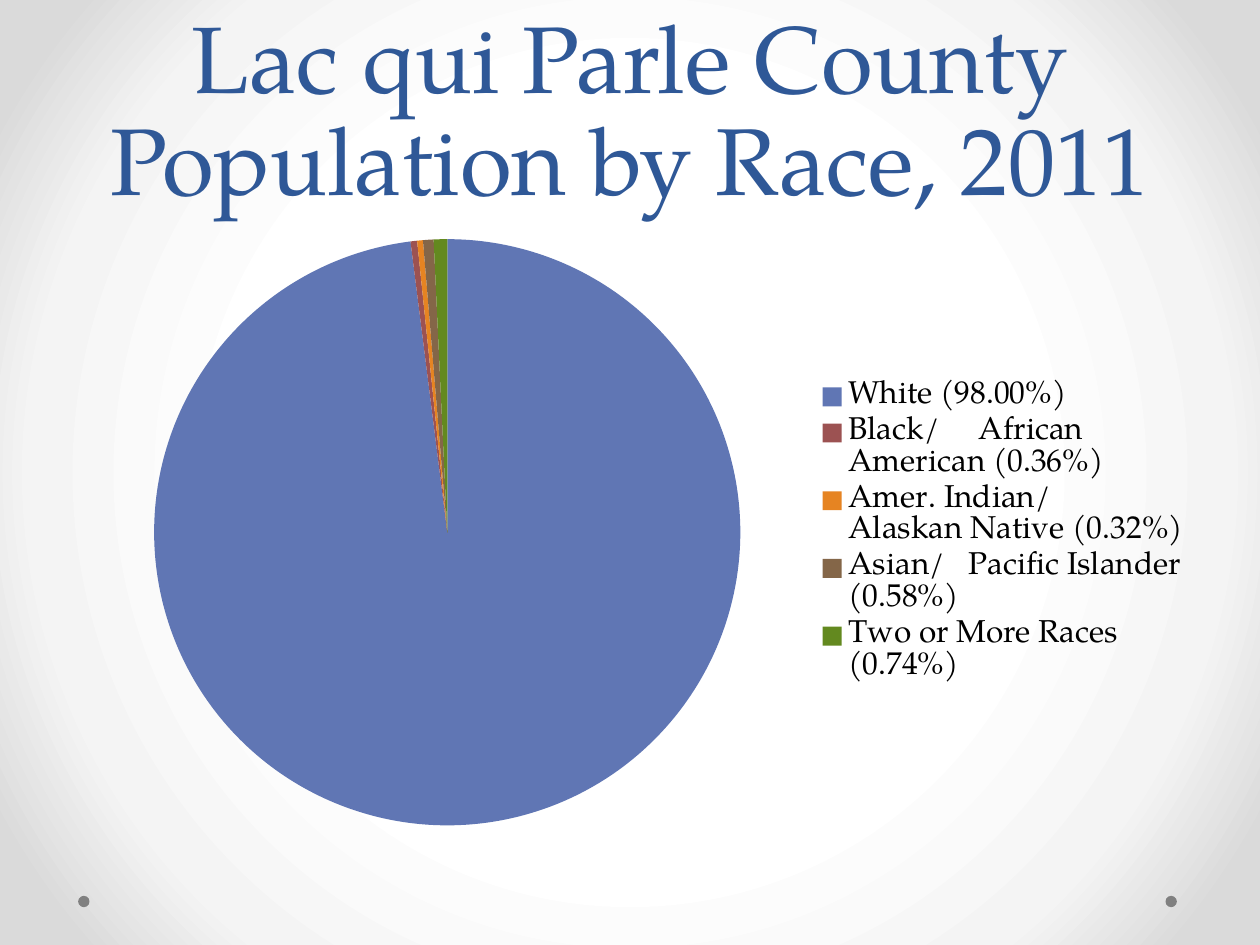
from pptx import Presentation
from pptx.chart.data import CategoryChartData
from pptx.dml.color import RGBColor
from pptx.enum.chart import XL_CHART_TYPE, XL_LEGEND_POSITION
from pptx.enum.shapes import MSO_SHAPE
from pptx.enum.text import MSO_ANCHOR, PP_ALIGN
from pptx.oxml import parse_xml
from pptx.oxml.ns import nsdecls, qn
from pptx.util import Inches, Pt

FONT = "TeX Gyre Pagella"
COLORS = {"title": "2F5897", "text": "000000", "dot": "808080"}
BACKGROUND_STOPS = [(50, "FFFFFF"), (76, "F4F4F4"), (92, "DADADA")]
RACES = [
    ("White (98.00%)", 98.00, "6076B4"),
    ("Black/     African American (0.36%)", 0.36, "9C5252"),
    ("Amer. Indian/    Alaskan Native (0.32%)", 0.32, "E68422"),
    ("Asian/   Pacific Islander (0.58%)", 0.58, "846648"),
    ("Two or More Races (0.74%)", 0.74, "63891F"),
]


def style_font(font, size, color):
    font.name = FONT
    font.size = Pt(size)
    font.color.rgb = RGBColor.from_string(color)


def paint_background(slide):
    """Fill the background with a gradient that darkens away from the centre."""
    slide.background.fill.solid()
    properties = slide.element.find(".//" + qn("p:bgPr"))
    stops = "".join(
        f'<a:gs pos="{percent * 1000}"><a:srgbClr val="{color}"/></a:gs>'
        for percent, color in BACKGROUND_STOPS
    )
    gradient = parse_xml(
        f'<a:gradFill {nsdecls("a")} rotWithShape="1"><a:gsLst>{stops}</a:gsLst>'
        '<a:path path="circle"><a:fillToRect l="50000" t="50000" r="50000" b="50000"/>'
        "</a:path></a:gradFill>"
    )
    properties.replace(properties.find(qn("a:solidFill")), gradient)


def add_corner_dots(slide, left, top, width, size):
    for dot_left in (left, left + width - size):
        dot = slide.shapes.add_shape(MSO_SHAPE.OVAL, dot_left, top, size, size)
        dot.shadow.inherit = False
        dot.fill.solid()
        dot.fill.fore_color.rgb = RGBColor.from_string(COLORS["dot"])
        dot.line.fill.background()


def add_title(slide, left, top, width, height):
    frame = slide.shapes.add_textbox(left, top, width, height).text_frame
    frame.word_wrap = True
    frame.vertical_anchor = MSO_ANCHOR.BOTTOM
    frame.text = "Lac qui Parle County Population by Race, 2011"
    paragraph = frame.paragraphs[0]
    paragraph.alignment = PP_ALIGN.CENTER
    paragraph.line_spacing = Pt(58)
    style_font(paragraph.runs[0].font, 54, COLORS["title"])


def manual_layout(x, y, w, h, target=""):
    """Return a chart layout whose lengths are fractions of the chart's box."""
    return parse_xml(
        f'<c:layout {nsdecls("c")}><c:manualLayout>{target}'
        '<c:xMode val="edge"/><c:yMode val="edge"/>'
        f'<c:x val="{x}"/><c:y val="{y}"/><c:w val="{w}"/><c:h val="{h}"/>'
        "</c:manualLayout></c:layout>"
    )


def add_race_pie(slide, left, top, width, height):
    data = CategoryChartData()
    data.categories = [label for label, _, _ in RACES]
    data.add_series("Series 1", [share for _, share, _ in RACES])
    chart = slide.shapes.add_chart(
        XL_CHART_TYPE.PIE, left, top, width, height, data
    ).chart
    chart.has_title = False
    style_font(chart.font, 18, COLORS["text"])

    pie = chart.plots[0]
    pie.vary_by_categories = True
    for index, (_, _, color) in enumerate(RACES):
        fill = pie.series[0].points[index].format.fill
        fill.solid()
        fill.fore_color.rgb = RGBColor.from_string(color)

    chart.has_legend = True
    legend = chart.legend
    legend.position = XL_LEGEND_POSITION.RIGHT
    legend.include_in_layout = False

    plot_area = chart.element.find(".//" + qn("c:plotArea"))
    for default in plot_area.findall(qn("c:layout")):
        plot_area.remove(default)
    inner = '<c:layoutTarget val="inner"/>'
    plot_area.insert(0, manual_layout(0.07, 0.03, 0.52, 0.94, inner))

    legend_element = chart.element.find(".//" + qn("c:legend"))
    for default in legend_element.findall(qn("c:layout")):
        legend_element.remove(default)
    legend_position = legend_element.find(qn("c:legendPos"))
    legend_position.addnext(manual_layout(0.66, 0.25, 0.32, 0.5))


def main():
    presentation = Presentation()
    presentation.slide_width = Inches(10)
    presentation.slide_height = Inches(7.5)
    slide = presentation.slides.add_slide(presentation.slide_layouts[6])
    paint_background(slide)
    add_corner_dots(slide, Inches(0.62), Inches(7.11), Inches(8.72), Inches(0.09))
    add_title(slide, Inches(0.5), Inches(0), Inches(9), Inches(1.75))
    add_race_pie(slide, Inches(0.58), Inches(1.75), Inches(9), Inches(4.95))
    presentation.save("out.pptx")


if __name__ == "__main__":
    main()
